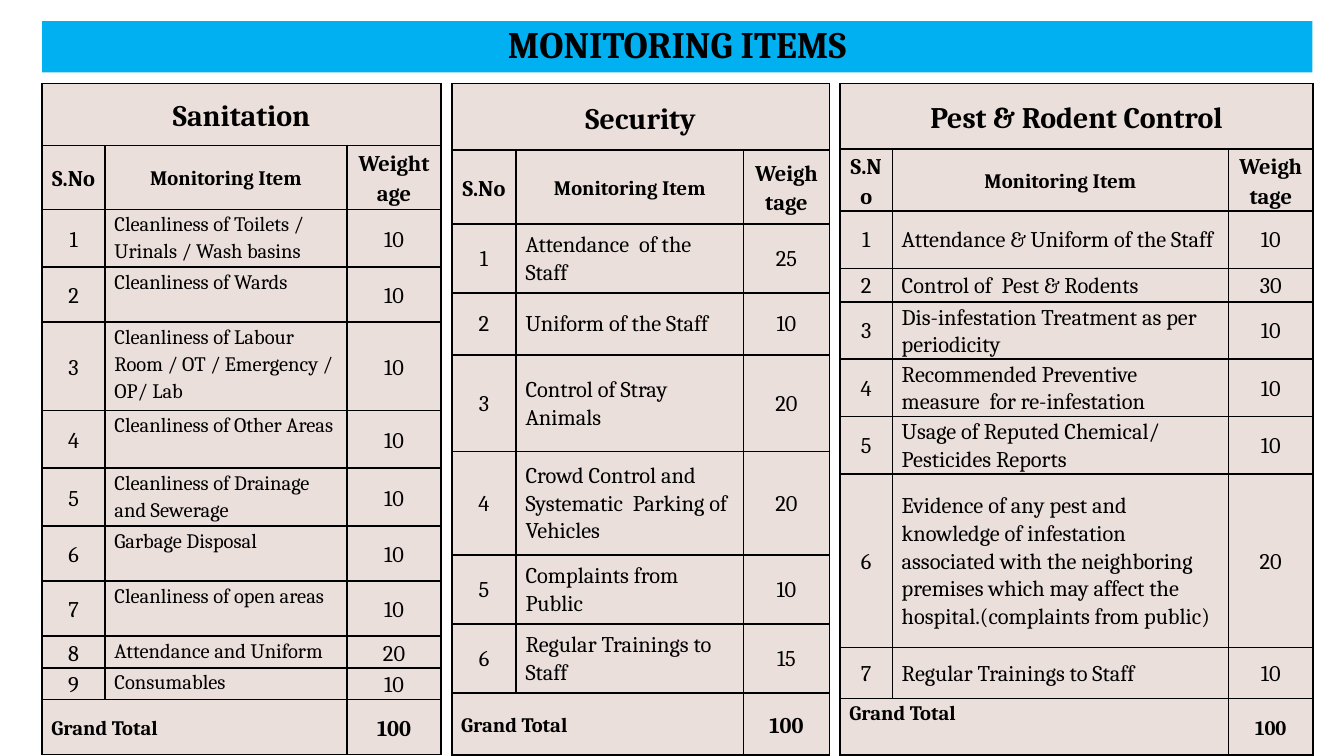
from pptx import Presentation
from pptx.dml.color import RGBColor
from pptx.enum.shapes import MSO_SHAPE
from pptx.enum.text import MSO_ANCHOR, PP_ALIGN
from pptx.oxml import parse_xml
from pptx.oxml.ns import nsdecls
from pptx.util import Pt

RECT = MSO_SHAPE.RECTANGLE
MID, TOP = MSO_ANCHOR.MIDDLE, MSO_ANCHOR.TOP
LEFT, MIDDLE = PP_ALIGN.LEFT, PP_ALIGN.CENTER
BLACK = RGBColor(0x00, 0x00, 0x00)
BLUE = RGBColor(0x00, 0xB0, 0xF0)
ROSE = RGBColor(0xEB, 0xDF, 0xDB)
FONT = "Cambria"
TABLE_TOP = 44.8
HEADS = (("S.No", 12), ("Monitoring Item", 11), ("Weightage", 12))

CLEAN = (
    ("Cleanliness of Toilets / Urinals / Wash basins", 10),
    ("Cleanliness of Wards", 10),
    ("Cleanliness of Labour Room / OT / Emergency / OP/ Lab", 10),
    ("Cleanliness of Other Areas", 10),
    ("Cleanliness of Drainage and Sewerage", 10),
    ("Garbage Disposal", 10),
    ("Cleanliness of open areas", 10),
    ("Attendance and Uniform", 20),
    ("Consumables", 10),
)
GUARD = (
    ("Attendance  of the Staff", 25),
    ("Uniform of the Staff", 10),
    ("Control of Stray Animals", 20),
    ("Crowd Control and Systematic  Parking of Vehicles", 20),
    ("Complaints from Public", 10),
    ("Regular Trainings to Staff", 15),
)
PEST = (
    ("Attendance & Uniform of the Staff", 10),
    ("Control of  Pest & Rodents", 30),
    ("Dis-infestation Treatment as per periodicity", 10),
    ("Recommended Preventive measure  for re-infestation", 10),
    ("Usage of Reputed Chemical/ Pesticides Reports", 10),
    ("Evidence of any pest and knowledge of infestation associated with the "
     "neighboring premises which may affect the hospital.(complaints from "
     "public)", 20),
    ("Regular Trainings to Staff", 10),
)


def style(para, text, size, bold, align, space):
    """Write one paragraph of text in the slide's font."""
    para.text = text
    para.alignment = align
    para.line_spacing = space
    font = para.font
    font.name, font.size, font.bold = FONT, Pt(size), bold
    font.color.rgb = BLACK


def frame(cell):
    """Give a cell its black borders and its fill."""
    props = cell._tc.get_or_add_tcPr()
    for side in ("lnL", "lnR", "lnT", "lnB"):
        props.append(parse_xml(
            f'<a:{side} {nsdecls("a")} w="12700"><a:solidFill>'
            f'<a:srgbClr val="{BLACK}"/></a:solidFill></a:{side}>'))
    cell.fill.solid()
    cell.fill.fore_color.rgb = ROSE


def put(cell, text, size=12, bold=False, align=MIDDLE, space=1.15, anchor=MID):
    """Write text into a table cell."""
    cell.margin_left = cell.margin_right = Pt(5)
    cell.margin_top = cell.margin_bottom = 0
    cell.vertical_anchor = anchor
    style(cell.text_frame.paragraphs[0], text, size, bold, align, space)


def add_list(slide, left, name, items, cols, rows,
             size=12, space=1.07, anchor=MID, sum_size=12, sum_anchor=MID):
    """Add one table of monitoring items with its grand total."""
    table = slide.shapes.add_table(
        len(rows), len(cols), Pt(left), Pt(TABLE_TOP),
        Pt(sum(cols)), Pt(sum(rows))).table
    for col, width in zip(table.columns, cols):
        col.width = Pt(width)
    for row, height in zip(table.rows, rows):
        row.height = Pt(height)
    for cell in table.iter_cells():
        frame(cell)
    last = len(rows) - 1
    table.cell(0, 0).merge(table.cell(0, 2))
    table.cell(last, 0).merge(table.cell(last, 1))

    put(table.cell(0, 0), name, 16, True)
    for col, (head, points) in enumerate(HEADS):
        put(table.cell(1, col), head, points, True)
    for num, (item, weight) in enumerate(items, 1):
        row = num + 1
        put(table.cell(row, 0), str(num), space=space)
        put(table.cell(row, 1), item, size, False, LEFT, space, anchor)
        put(table.cell(row, 2), str(weight), space=space)
    put(table.cell(last, 0), "Grand Total", 11, True, LEFT, anchor=sum_anchor)
    total = sum(weight for item, weight in items)
    put(table.cell(last, 2), str(total), sum_size, True)


def add_title(slide, text):
    """Add the blue title bar."""
    bar = slide.shapes.add_shape(RECT, Pt(22.5), Pt(11.3), Pt(680.5), Pt(27.5))
    bar.shadow.inherit = False
    bar.fill.solid()
    bar.fill.fore_color.rgb = BLUE
    bar.line.fill.background()
    box = bar.text_frame
    box.word_wrap = True
    box.vertical_anchor = MID
    box.margin_left = box.margin_right = Pt(5)
    box.margin_top = box.margin_bottom = Pt(2.7)
    style(box.paragraphs[0], text, 20, True, MIDDLE, 0.9)


def main():
    """Build the slide and save it."""
    deck = Presentation()
    deck.slide_width, deck.slide_height = Pt(720), Pt(405)
    slide = deck.slides.add_slide(deck.slide_layouts[6])
    add_list(slide, 22.5, "Sanitation", CLEAN, (33.8, 129.6, 50.4),
             (33.2, 34.2, 31, 29.5, 47.2, 31, 31, 29.5, 29.5, 17, 17, 29.5),
             size=11, space=1.15, anchor=TOP)
    add_list(slide, 242, "Security", GUARD, (34.6, 121.7, 46.1),
             (35.5, 39.6, 37, 33.2, 51.8, 55.5, 37, 37, 33.2))
    add_list(slide, 450, "Pest & Rodent Control", PEST, (28.1, 180, 45.4),
             (35.2, 33, 30.8, 18.2, 30.5, 30.8, 30.8, 93, 27.2, 30.2),
             sum_size=11, sum_anchor=TOP)
    add_title(slide, "MONITORING ITEMS")
    deck.save("out.pptx")


if __name__ == "__main__":
    main()
